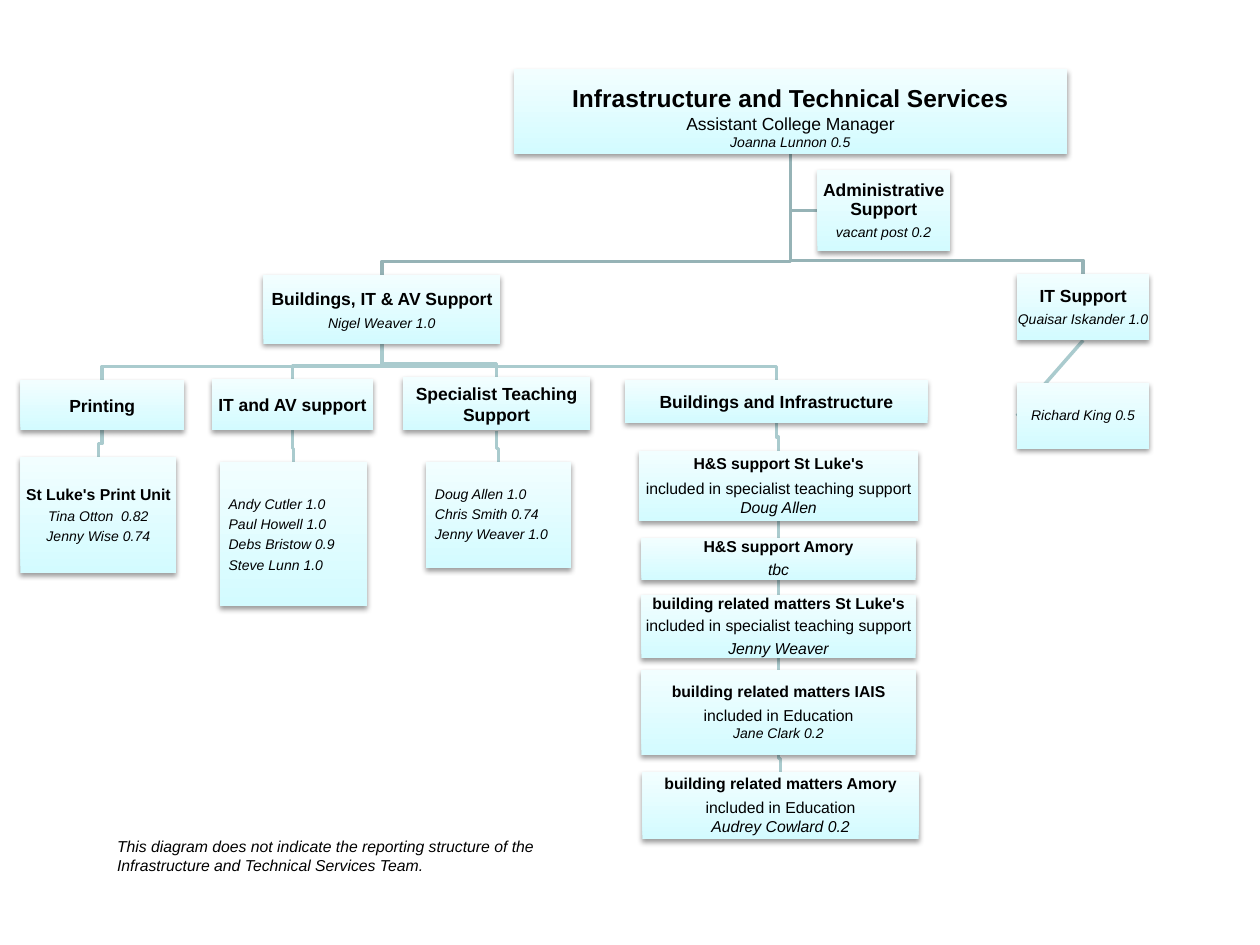
from lxml import etree
from pptx import Presentation
from pptx.dml.color import RGBColor
from pptx.enum.shapes import MSO_CONNECTOR, MSO_SHAPE
from pptx.enum.text import MSO_ANCHOR, PP_ALIGN
from pptx.oxml.ns import qn
from pptx.util import Cm, Pt

RECTANGLE = MSO_SHAPE.RECTANGLE
STRAIGHT = MSO_CONNECTOR.STRAIGHT
LEFT, CENTER = PP_ALIGN.LEFT, PP_ALIGN.CENTER
TOP, MIDDLE = MSO_ANCHOR.TOP, MSO_ANCHOR.MIDDLE
TOP_SIDE, LEFT_SIDE, BOTTOM_SIDE = 0, 1, 2
DARK_LINE, LIGHT_LINE = "96B3B6", "AACBCE"
BEND = Cm(0.28)  # height of a bend above the lower box
BLANK_LAYOUT = 6


def text_style(size, bold=False, italic=False, align=CENTER, spacing=1.0, after=0.0):
    return {
        "font": {"name": "Arial", "size": Pt(size), "bold": bold, "italic": italic},
        "paragraph": {"alignment": align, "line_spacing": spacing,
                      "space_after": Pt(after), "space_before": Pt(0)},
    }


def tight_style(size, **options):
    return text_style(size, spacing=0.9, after=round(0.35 * size, 2), **options)


STYLES = {
    "title": text_style(14, bold=True),
    "role": text_style(10),
    "person": text_style(8, italic=True),
    "unit": text_style(10, bold=True, after=3),
    "tight unit": tight_style(10, bold=True),
    "task": tight_style(9, bold=True),
    "detail": text_style(9),
    "tight detail": tight_style(9),
    "holder": text_style(9, italic=True),
    "tight holder": tight_style(9, italic=True),
    "tight person": tight_style(8, italic=True),
    "technician": text_style(8, italic=True, align=LEFT, after=2),
    "tight technician": tight_style(8, italic=True, align=LEFT),
    "note": text_style(9, italic=True, align=LEFT),
}

# key: (left, top, width, height) in cm, then (text, style) lines
BOXES = {
    "head": ((10.36, 1.4, 11.15, 1.7), [
        ("Infrastructure and Technical Services", "title"),
        ("Assistant College Manager", "role"),
        ("Joanna Lunnon 0.5", "person")]),
    "admin": ((16.48, 3.43, 2.67, 1.63), [
        ("Administrative Support", "tight unit"),
        ("vacant post 0.2", "tight person")]),
    "support": ((5.31, 5.55, 4.78, 1.38), [
        ("Buildings, IT & AV Support", "unit"),
        ("Nigel Weaver 1.0", "person")]),
    "it": ((20.5, 5.53, 2.67, 1.33), [
        ("IT Support", "tight unit"),
        ("Quaisar Iskander 1.0", "tight person")]),
    "it staff": ((20.5, 7.72, 2.67, 1.33), [
        ("Richard King 0.5", "tight person")]),
    "printing": ((0.41, 7.67, 3.3, 1), [("Printing", "unit")]),
    "print unit": ((0.41, 9.22, 3.15, 2.34), [
        ("St Luke's Print Unit", "task"),
        ("Tina Otton  0.82", "tight person"),
        ("Jenny Wise 0.74", "tight person")]),
    "av": ((4.27, 7.65, 3.25, 1.02), [("IT and AV support", "unit")]),
    "av staff": ((4.43, 9.32, 2.97, 2.9), [
        ("Andy Cutler 1.0", "technician"),
        ("Paul Howell 1.0", "technician"),
        ("Debs Bristow 0.9", "technician"),
        ("Steve Lunn 1.0", "technician")]),
    "teaching": ((8.12, 7.61, 3.78, 1.07), [("Specialist Teaching Support", "unit")]),
    "teaching staff": ((8.59, 9.32, 2.92, 2.13), [
        ("Doug Allen 1.0", "tight technician"),
        ("Chris Smith 0.74", "tight technician"),
        ("Jenny Weaver 1.0", "tight technician")]),
    "buildings": ((12.6, 7.67, 6.1, 0.85), [("Buildings and Infrastructure", "unit")]),
    "safety st luke's": ((12.88, 9.09, 5.63, 1.42), [
        ("H&S support St Luke's", "task"),
        ("included in specialist teaching support", "detail"),
        ("Doug Allen", "holder")]),
    "safety amory": ((12.93, 10.84, 5.53, 0.86), [
        ("H&S support Amory", "task"),
        ("tbc", "tight holder")]),
    "matters st luke's": ((12.93, 12, 5.53, 1.27), [
        ("building related matters St Luke's", "task"),
        ("included in specialist teaching support", "tight detail"),
        ("Jenny Weaver", "tight holder")]),
    "matters iais": ((12.93, 13.51, 5.53, 1.71), [
        ("building related matters IAIS", "task"),
        ("included in Education", "detail"),
        ("Jane Clark 0.2", "person")]),
    "matters amory": ((12.95, 15.57, 5.57, 1.35), [
        ("building related matters Amory", "task"),
        ("included in Education", "detail"),
        ("Audrey Cowlard 0.2", "holder")]),
}

BRANCHES = [
    ("head", "support"), ("head", "it"),
    ("support", "printing"), ("support", "av"),
    ("support", "teaching"), ("support", "buildings"),
    ("printing", "print unit"), ("av", "av staff"),
    ("teaching", "teaching staff"), ("buildings", "safety st luke's"),
    ("matters iais", "matters amory"),
]
STACK = ["safety st luke's", "safety amory", "matters st luke's", "matters iais"]


def color(hex_value):
    return RGBColor.from_string(hex_value)


def set_values(target, values):
    for name, value in values.items():
        setattr(target, name, value)


def bottom_middle(box):
    return box.left + box.width // 2, box.top + box.height


class OrgChart:
    def __init__(self, slide):
        self.slide = slide
        self.shapes = slide.shapes

    def add_lines(self, frame, lines, **frame_format):
        set_values(frame, {"word_wrap": True, **frame_format})
        for number, (text, style) in enumerate(lines):
            paragraph = frame.add_paragraph() if number else frame.paragraphs[0]
            run = paragraph.add_run()
            run.text = text
            set_values(paragraph, STYLES[style]["paragraph"])
            set_values(run.font, STYLES[style]["font"])
            run.font.color.rgb = color("000000")

    def box(self, place, lines, anchor=MIDDLE, top_inset=0.0):
        box = self.shapes.add_shape(RECTANGLE, *map(Cm, place))
        box.line.fill.background()
        box.fill.gradient()
        box.fill.gradient_angle = 90
        for stop, shade in zip(box.fill.gradient_stops, ("D3FBFF", "F2FEFF")):
            stop.color.rgb = color(shade)
        self.drop_shadow(box)
        listed = STYLES[lines[0][1]]["paragraph"]["alignment"] == LEFT
        self.add_lines(box.text_frame, lines, vertical_anchor=anchor,
                       margin_left=Cm(0.18 if listed else 0), margin_right=0,
                       margin_top=Cm(top_inset), margin_bottom=0)
        return box

    def drop_shadow(self, box):
        box.shadow.inherit = False
        effects = box._element.spPr.find(qn("a:effectLst"))
        shadow = etree.SubElement(effects, qn("a:outerShdw"), blurRad=str(Pt(3.1)),
                                  dist=str(Pt(1.6)), dir="5400000", rotWithShape="0")
        black = etree.SubElement(shadow, qn("a:srgbClr"), val="000000")
        etree.SubElement(black, qn("a:alpha"), val="38000")

    def finish_line(self, line, shade):
        """Format a line and send it behind the boxes."""
        line.line.color.rgb = color(shade)
        line.line.width = Pt(2)
        line._element.getparent().insert(2, line._element)

    def elbow(self, start, *corners, shade=LIGHT_LINE):
        builder = self.shapes.build_freeform(*start, scale=1.0)
        builder.add_line_segments(corners, close=False)
        elbow = builder.convert_to_shape()
        elbow.fill.background()
        elbow.shadow.inherit = False
        self.finish_line(elbow, shade)

    def branch(self, parent, child, shade):
        x, y = bottom_middle(parent)
        child_x = child.left + child.width // 2
        bend_y = child.top - BEND
        self.elbow((x, y), (x, bend_y), (child_x, bend_y), (child_x, child.top), shade=shade)

    def straight(self, parent, child, side=TOP_SIDE):
        link = self.shapes.add_connector(STRAIGHT, 0, 0, 0, 0)
        link.begin_connect(parent, BOTTOM_SIDE)
        link.end_connect(child, side)
        self.finish_line(link, LIGHT_LINE)
        etree.SubElement(link._element.spPr, qn("a:effectLst"))

    def note(self, place, text):
        note = self.shapes.add_textbox(*map(Cm, place))
        self.add_lines(note.text_frame, [(text, "note")])


def main():
    presentation = Presentation()
    presentation.slide_width, presentation.slide_height = Cm(25.4), Cm(19.05)
    chart = OrgChart(presentation.slides.add_slide(presentation.slide_layouts[BLANK_LAYOUT]))

    head_format = {"anchor": TOP, "top_inset": 0.28}
    boxes = {key: chart.box(place, lines, **(head_format if key == "head" else {}))
             for key, (place, lines) in BOXES.items()}

    for parent, child in BRANCHES:
        shade = DARK_LINE if parent == "head" else LIGHT_LINE
        chart.branch(boxes[parent], boxes[child], shade)
    for upper, lower in zip(STACK, STACK[1:]):
        chart.straight(boxes[upper], boxes[lower])
    chart.straight(boxes["it"], boxes["it staff"], LEFT_SIDE)

    admin = boxes["admin"]
    x, y = bottom_middle(boxes["head"])
    admin_y = admin.top + admin.height // 2
    chart.elbow((x, y), (x, admin_y), (admin.left, admin_y), shade=DARK_LINE)

    chart.note((2.11, 16.74, 10.41, 1.02),
               "This diagram does not indicate the reporting structure of the "
               "Infrastructure and Technical Services Team.")
    presentation.save("out.pptx")


if __name__ == "__main__":
    main()
